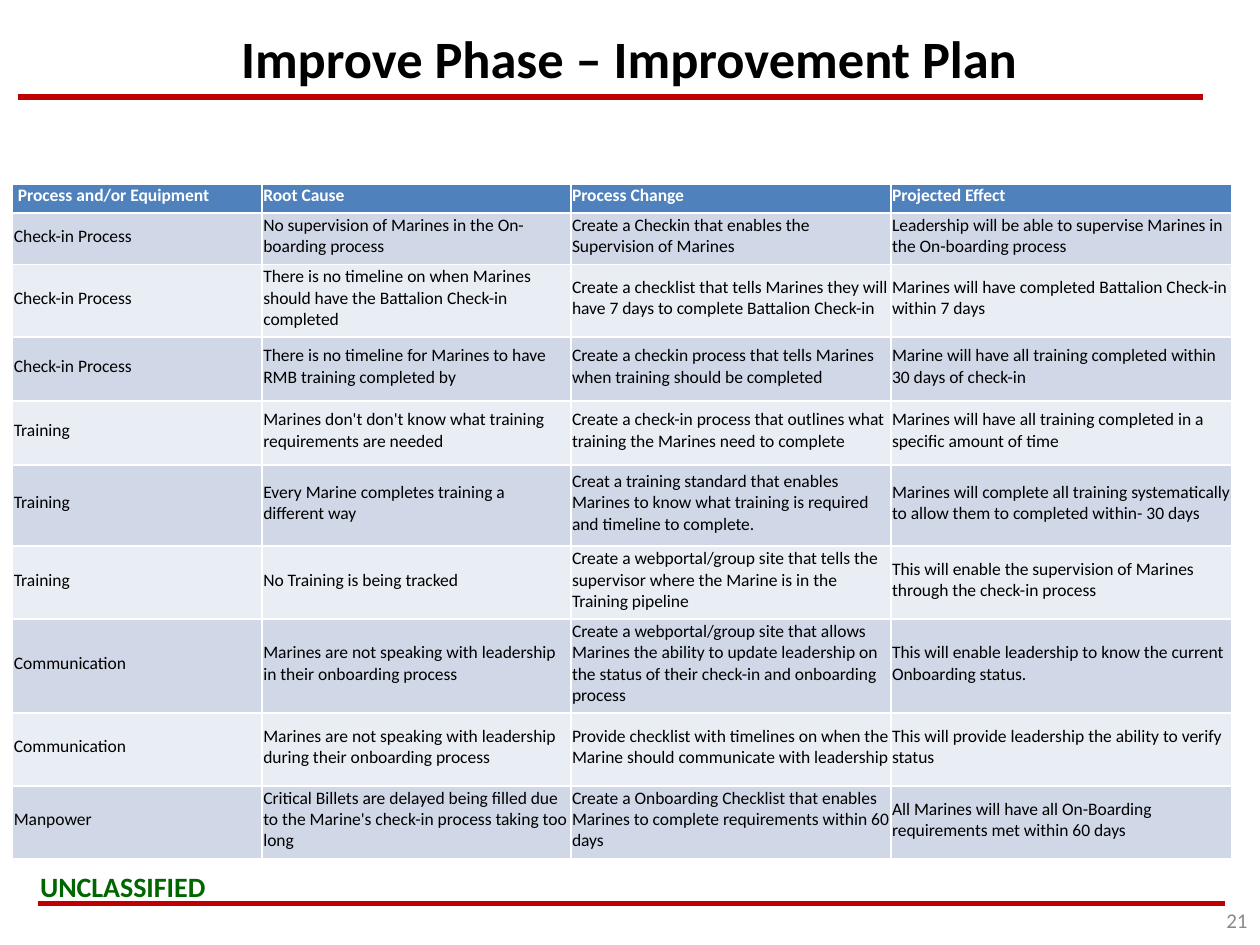
import pptx
import pptx.util
import pptx.dml.color
import pptx.enum.shapes
import pptx.enum.text
import pptx.oxml

RGBColor = pptx.dml.color.RGBColor
PP_ALIGN = pptx.enum.text.PP_ALIGN
MIDDLE = pptx.enum.text.MSO_ANCHOR.MIDDLE
Pt = pptx.util.Pt

BLACK = RGBColor(0x00, 0x00, 0x00)
WHITE = RGBColor(0xFF, 0xFF, 0xFF)
RED = RGBColor(0xC0, 0x00, 0x00)
GREEN = RGBColor(0x00, 0x66, 0x00)
GRAY = RGBColor(0x89, 0x89, 0x89)
HEADER_BLUE = RGBColor(0x4F, 0x81, 0xBD)
BANDS = (RGBColor(0xE9, 0xED, 0xF4), RGBColor(0xD0, 0xD8, 0xE8))

COLUMNS, ROWS = 100, 75  # grid of the slide, one unit is 0.1 inch

COLUMN_WIDTHS = (19.8, 24.5, 25.4, 27.1)
ROW_HEIGHTS = (2.3, 4.1, 5.75, 5.1, 5.05, 6.45, 5.8, 7.45, 5.8, 5.75)
PLAN = (
    (" Process and/or Equipment", "Root Cause", "Process Change", "Projected Effect"),
    ("Check-in Process",
     "No supervision of Marines in the On-boarding process",
     "Create a Checkin that enables the Supervision of Marines",
     "Leadership will be able to supervise Marines in the On-boarding process"),
    ("Check-in Process",
     "There is no timeline on when Marines should have the Battalion Check-in completed",
     "Create a checklist that tells Marines they will have 7 days to complete Battalion Check-in",
     "Marines will have completed Battalion Check-in within 7 days"),
    ("Check-in Process",
     "There is no timeline for Marines to have RMB training completed by",
     "Create a checkin process that tells Marines when training should be completed",
     "Marine will have all training completed within 30 days of check-in"),
    ("Training",
     "Marines don't don't know what training requirements are needed",
     "Create a check-in process that outlines what training the Marines need to complete",
     "Marines will have all training completed in a specific amount of time"),
    ("Training",
     "Every Marine completes training a different way",
     "Creat a training standard that enables Marines to know what training is required "
     "and timeline to complete.",
     "Marines will complete all training systematically to allow them to completed "
     "within- 30 days"),
    ("Training",
     "No Training is being tracked",
     "Create a webportal/group site that tells the supervisor where the Marine is in the "
     "Training pipeline",
     "This will enable the supervision of Marines through the check-in process"),
    ("Communication",
     "Marines are not speaking with leadership in their onboarding process",
     "Create a webportal/group site that allows Marines the ability to update leadership on "
     "the status of their check-in and onboarding process",
     "This will enable leadership to know the current Onboarding status."),
    ("Communication",
     "Marines are not speaking with leadership during their onboarding process",
     "Provide checklist with timelines on when the Marine should communicate with leadership",
     "This will provide leadership the ability to verify status"),
    ("Manpower",
     "Critical Billets are delayed being filled due to the Marine's check-in process taking "
     "too long",
     "Create a Onboarding Checklist that enables Marines to complete requirements within 60 days",
     "All Marines will have all On-Boarding requirements met within 60 days"),
)


def grid(*units):
    return [pptx.util.Inches(u / 10) for u in units]


def write(tf, text, size, color, bold=False, align=PP_ALIGN.LEFT):
    tf.text = text
    p = tf.paragraphs[0]
    p.alignment = align
    p.font.name = "Calibri"
    p.font.size = Pt(size)
    p.font.bold = bold
    p.font.color.rgb = color


def add_title(s, text):
    sp = s.shapes.title
    sp.left, sp.top, sp.width, sp.height = grid(13.6, -1.7, 72.7, 12.5)
    sp.text_frame.vertical_anchor = MIDDLE
    write(sp.text_frame, text, 30, BLACK, True, PP_ALIGN.CENTER)


def add_rule(s, left, right, y):
    line = s.shapes.add_connector(
        pptx.enum.shapes.MSO_CONNECTOR.STRAIGHT, *grid(left, y, right, y))
    line.line.color.rgb = RED
    line.line.width = Pt(3)
    sp_pr = line._element.spPr
    sp_pr.append(pptx.oxml.parse_xml(
        '<a:effectLst xmlns:a="http://schemas.openxmlformats.org/drawingml/2006/main"/>'))


def add_label(s, box, text, size, color, wrap=True, **style):
    tf = s.shapes.add_textbox(*grid(*box)).text_frame
    tf.word_wrap = wrap
    tf.vertical_anchor = MIDDLE
    write(tf, text, size, color, **style)


def fill_cell(cell, text, row):
    header = row == 0
    cell.margin_left, cell.margin_right, cell.margin_top, cell.margin_bottom = grid(
        0.1, 0.1, 0.1, 0.5)
    cell.vertical_anchor = MIDDLE
    cell.fill.solid()
    cell.fill.fore_color.rgb = HEADER_BLUE if header else BANDS[row % 2]
    write(cell.text_frame, text, 10, WHITE if header else BLACK, header)


def add_plan_table(s, left, top):
    box = grid(left, top, sum(COLUMN_WIDTHS), sum(ROW_HEIGHTS))
    table = s.shapes.add_table(len(PLAN), len(COLUMN_WIDTHS), *box).table
    for column, width in zip(table.columns, grid(*COLUMN_WIDTHS)):
        column.width = width
    for row, height in zip(table.rows, grid(*ROW_HEIGHTS)):
        row.height = height
    for i, texts in enumerate(PLAN):
        for j, text in enumerate(texts):
            fill_cell(table.cell(i, j), text, i)


def main():
    prs = pptx.Presentation()
    prs.slide_width, prs.slide_height = grid(COLUMNS, ROWS)
    s = prs.slides.add_slide(prs.slide_layouts[5])
    add_rule(s, 1.4, 95.5, 7.7)
    add_label(s, (2.2, 68.5, 15.3, 3.7), "UNCLASSIFIED", 16, GREEN, wrap=False, bold=True)
    add_rule(s, 3, 97.2, 71.7)
    add_title(s, "Improve Phase – Improvement Plan")
    add_label(s, (76.7, 71, 23.3, 4), "21", 12, GRAY, align=PP_ALIGN.RIGHT)
    add_plan_table(s, 1, 14.6)
    prs.save("out.pptx")


if __name__ == "__main__":
    main()
